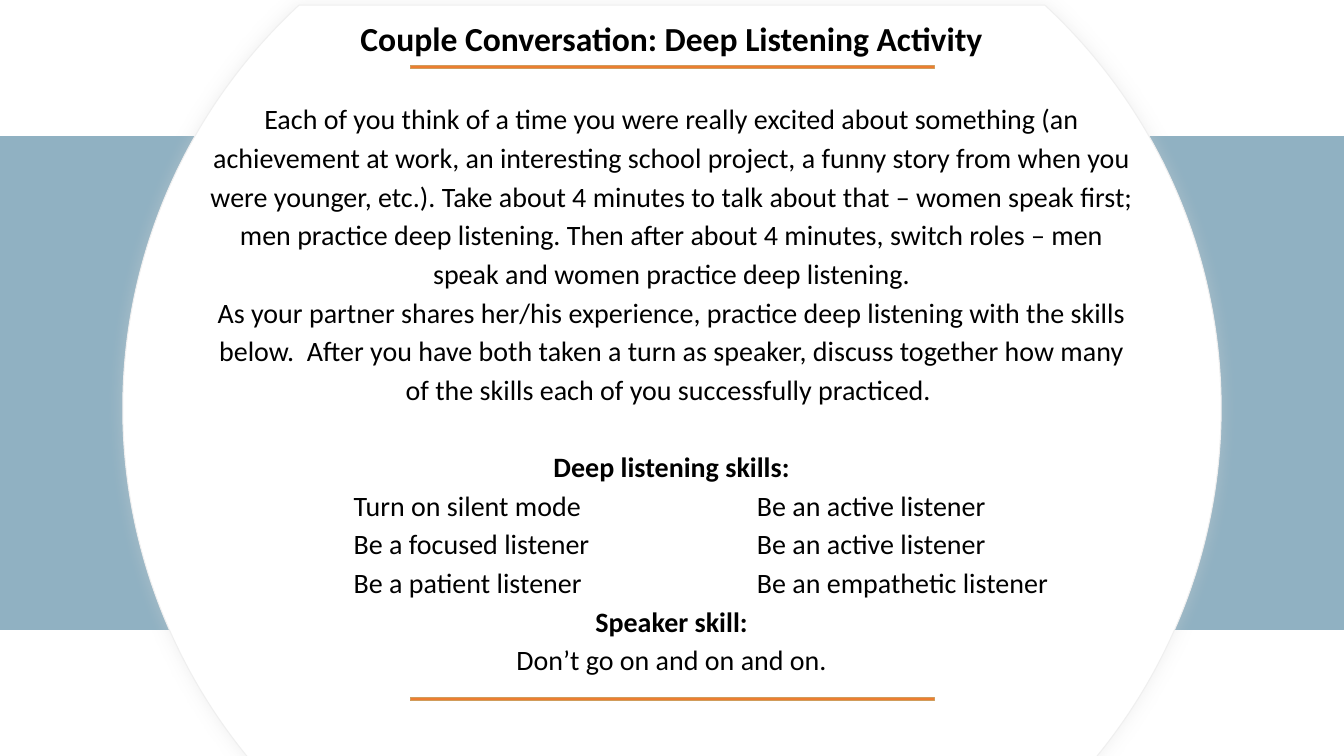
import math
from lxml import etree
from pptx import Presentation
from pptx import util as u
from pptx.dml import color
from pptx.enum import shapes, text
from pptx.oxml import ns

WIDE, HIGH = 33.87, 19.05
MID = WIDE / 2
BLUE, ORANGE, GOLD = "90B1C2", "ED7D31", "D09D5C"
WHITE, BLACK, PALE, GRAY = "FFFFFF", "000000", "EFEFEF", "D8D8D8"

TITLE = "Couple Conversation: Deep Listening Activity"
TASKS = [
    "Each of you think of a time you were really excited about something "
    "(an achievement at work, an interesting school project, a funny story "
    "from when you were younger, etc.). Take about 4 minutes to talk about "
    "that – women speak first; men practice deep listening. Then after about "
    "4 minutes, switch roles – men speak and women practice deep listening.",
    "As your partner shares her/his experience, practice deep listening with "
    "the skills below.  After you have both taken a turn as speaker, discuss "
    "together how many of the skills each of you successfully practiced. ",
]
SKILLS = [
    ("Turn on silent mode", "Be an active listener"),
    ("Be a focused listener", "Be an active listener"),
    ("Be a patient listener", "Be an empathetic listener"),
]


def rgb(code):
    return color.RGBColor.from_string(code)


def write(para, words, size=20, bold=False, code=BLACK, before=0, inset=0):
    run = para.add_run()
    run.text = words
    run.font.name = "Calibri"
    run.font.size = u.Pt(size)
    run.font.bold = bold
    run.font.color.rgb = rgb(code)
    para.alignment = text.PP_ALIGN.LEFT if inset else text.PP_ALIGN.CENTER
    para.line_spacing = 1.15
    para.space_before = u.Pt(before)
    para.space_after = u.Pt(0)
    props = para._p.get_or_add_pPr()
    props.set("marL", str(int(u.Cm(inset))))
    props.set("indent", "0")
    etree.SubElement(props, ns.qn("a:buNone"))


class Deck:
    def __init__(self):
        self.show = Presentation()
        self.show.slide_width = u.Cm(WIDE)
        self.show.slide_height = u.Cm(HIGH)
        self.slide = self.show.slides.add_slide(self.show.slide_layouts[1])

    def paint(self, shape, fill, line):
        shape.shadow.inherit = False
        shape.fill.solid()
        shape.fill.fore_color.rgb = rgb(fill)
        shape.line.color.rgb = rgb(line)
        shape.line.width = u.Pt(0.75)

    def bar(self, left, top, width, height, fill, line):
        shape = self.slide.shapes.add_shape(
            shapes.MSO_SHAPE.RECTANGLE,
            u.Cm(left), u.Cm(top), u.Cm(width), u.Cm(height))
        self.paint(shape, fill, line)

    def disc(self, mid, radius, top, base, fill, line):
        def spot(turn):
            return (MID + radius * math.cos(turn),
                    mid + radius * math.sin(turn))

        first = math.asin((top - mid) / radius)
        last = math.asin((base - mid) / radius)
        turns = [first, 0, last, math.pi - last, math.pi, math.pi - first]
        spots = [(u.Cm(x), u.Cm(y)) for x, y in map(spot, turns)]
        path = self.slide.shapes.build_freeform(*spots[0], scale=1.0)
        path.add_line_segments(spots[1:], close=True)
        shape = path.convert_to_shape()
        sides = list(shape._element.iter(ns.qn("a:lnTo")))
        for i in (0, 1, 3, 4):
            self.bend(sides[i], shape, spot, turns[i], turns[i + 1], radius)
        self.paint(shape, fill, line)
        self.glow(shape, GRAY, 11, 36)

    def bend(self, side, shape, spot, start, end, radius):
        pull = radius * 4 / 3 * math.tan((end - start) / 4)
        side.tag = ns.qn("a:cubicBezTo")
        for i, (turn, sign) in enumerate(((start, 1), (end, -1))):
            x, y = spot(turn)
            x -= sign * pull * math.sin(turn)
            y += sign * pull * math.cos(turn)
            knot = etree.Element(ns.qn("a:pt"),
                                 x=str(int(u.Cm(x) - shape.left)),
                                 y=str(int(u.Cm(y) - shape.top)))
            side.insert(i, knot)

    def glow(self, shape, code, blur, alpha):
        effects = shape._element.spPr.find(ns.qn("a:effectLst"))
        shade = etree.SubElement(effects, ns.qn("a:outerShdw"),
                                 blurRad=str(int(u.Pt(blur))), dist="0",
                                 dir="0", algn="ctr", rotWithShape="0")
        tint = etree.SubElement(shade, ns.qn("a:srgbClr"), val=code)
        etree.SubElement(tint, ns.qn("a:alpha"), val=str(alpha * 1000))

    def holder(self, index, left, top, width, height):
        shape = self.slide.placeholders[index]
        shape.left, shape.top = u.Cm(left), u.Cm(top)
        shape.width, shape.height = u.Cm(width), u.Cm(height)
        self.slide.shapes._spTree.append(shape._element)
        frame = shape.text_frame
        frame.word_wrap = True
        frame.auto_size = text.MSO_AUTO_SIZE.NONE
        frame.vertical_anchor = text.MSO_ANCHOR.MIDDLE
        return frame

    def title(self, words, *box):
        write(self.holder(0, *box).paragraphs[0], words, size=24, bold=True)

    def body(self, items, *box):
        frame = self.holder(1, *box)
        for i, (words, style) in enumerate(items):
            para = frame.add_paragraph() if i else frame.paragraphs[0]
            write(para, words, **style)


def main():
    deck = Deck()
    deck.bar(0, 3.43, WIDE, 12.44, BLUE, BLUE)
    deck.disc(10.29, 13.84, 0.13, 19.18, WHITE, PALE)
    for top in (1.65, 17.58):
        deck.bar(MID - 6.6, top, 13.21, 0.08, ORANGE, GOLD)
    deck.title(TITLE, 5, 0.12, 23.85, 1.53)
    items = [(task, {}) for task in TASKS]
    items.append(("Deep listening skills:", {"bold": True, "before": 27.4}))
    items += [(f"{one}\t\t\t\t{two}", {"inset": 3.66}) for one, two in SKILLS]
    items.append(("Speaker skill:", {"bold": True}))
    items.append(("Don’t go on and on and on.", {}))
    deck.body(items, 5, 2.31, 23.85, 14.86)
    deck.show.save("out.pptx")


if __name__ == "__main__":
    main()
